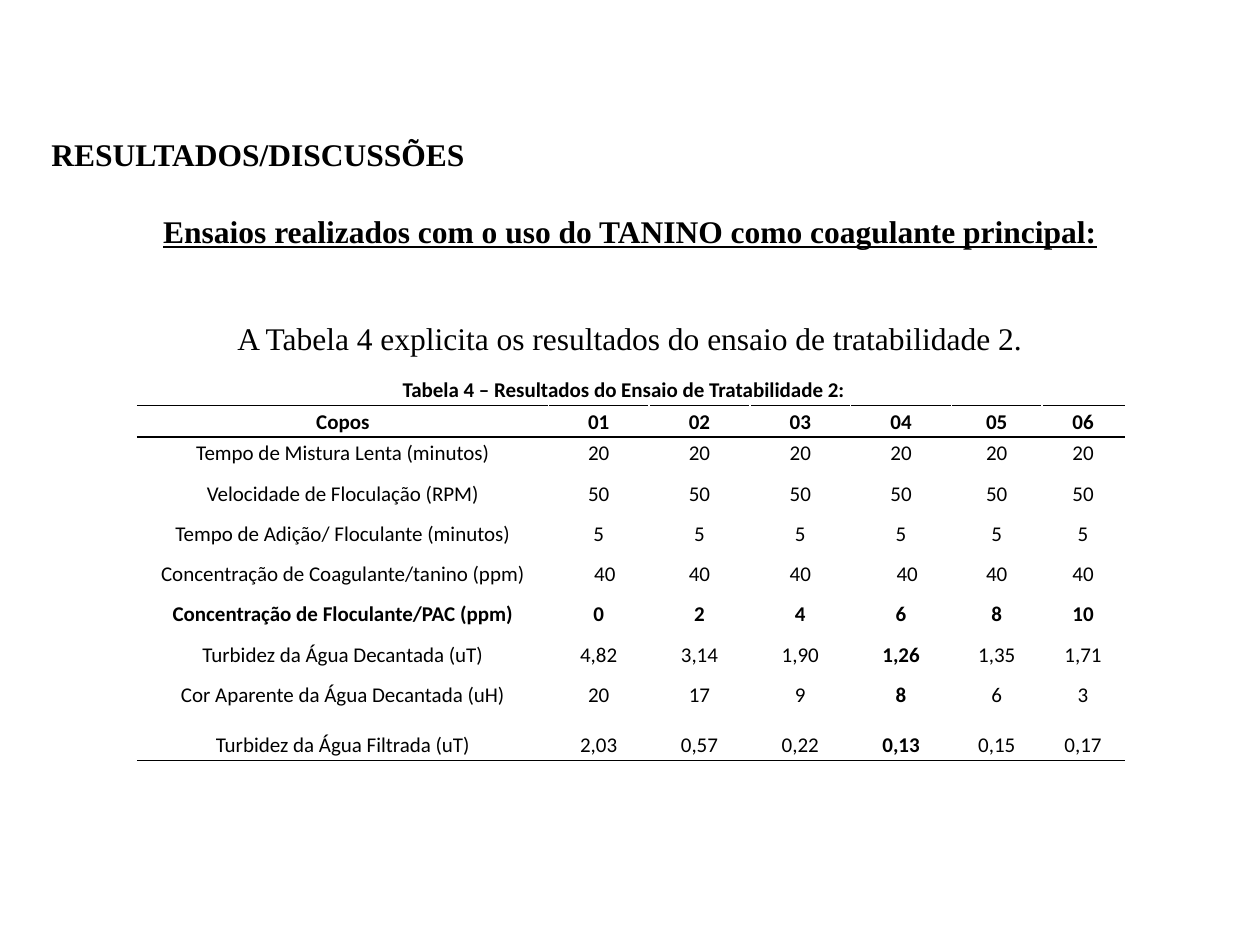
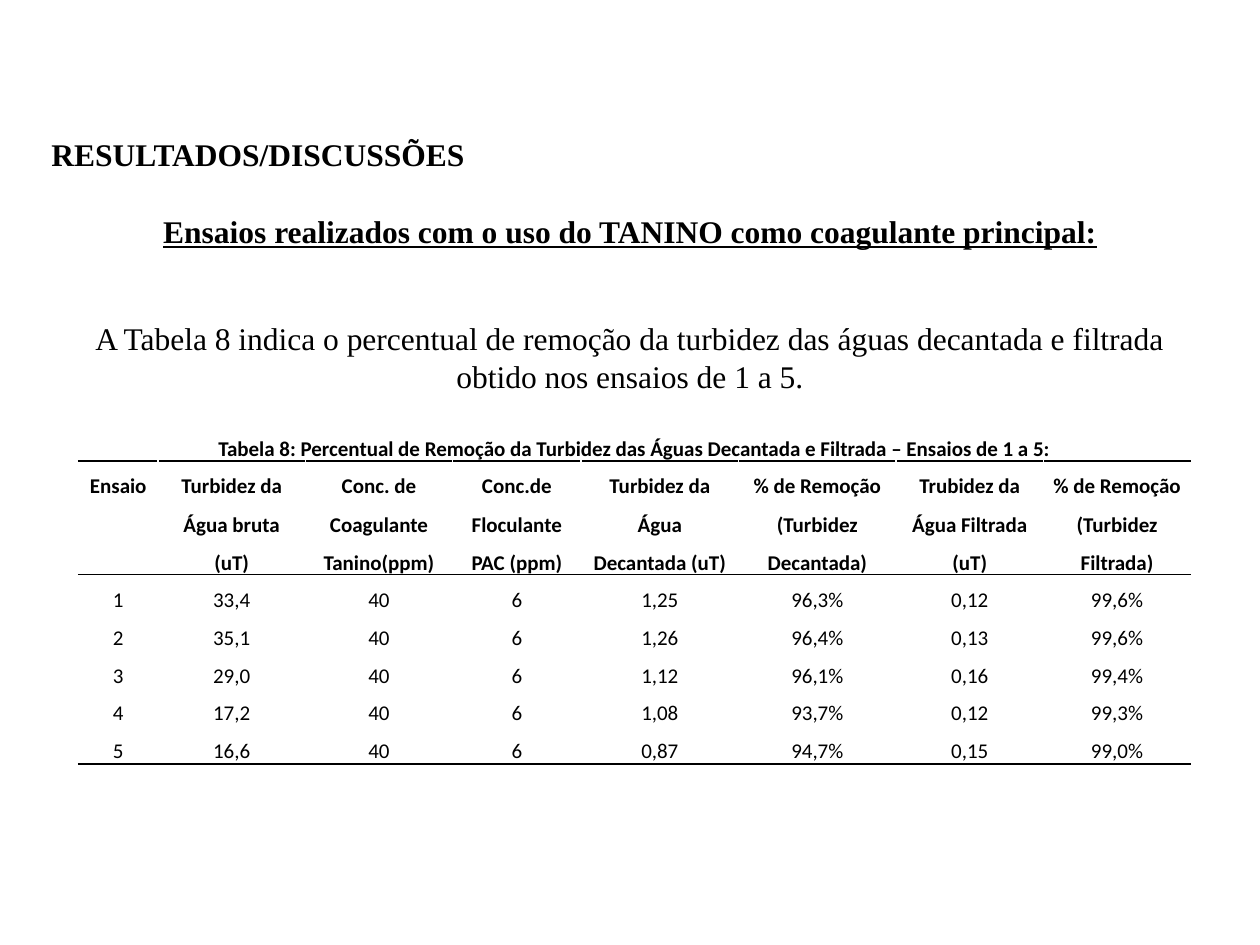
"""Build two slides of results for water treatment tests that use tannin."""
from lxml.etree import SubElement
from pptx import Presentation
from pptx.dml.color import RGBColor
from pptx.enum.text import PP_ALIGN
from pptx.oxml.ns import qn
from pptx.util import Pt

COLORS = {"ink": "000000"}
SECTION = "RESULTADOS/DISCUSSÕES"
SUBJECT = "Ensaios realizados com o uso do TANINO como coagulante principal:"


class Deck:
    heading_font = "Times New Roman"
    table_font = "Calibri"

    def __init__(self):
        self.presentation = Presentation()
        self.presentation.slide_width = Pt(720)
        self.presentation.slide_height = Pt(540)
        self.slide = None

    def add_slide(self):
        self.slide = self.presentation.slides.add_slide(self.presentation.slide_layouts[6])

    def style(self, paragraph, font, size, bold, align):
        paragraph.alignment = align
        paragraph.font.name = font
        paragraph.font.size = Pt(size)
        paragraph.font.bold = bold
        paragraph.font.color.rgb = RGBColor.from_string(COLORS["ink"])

    def heading(self, statement, height):
        frame = self.slide.shapes.add_textbox(Pt(22.3), Pt(73.5), Pt(675.4), Pt(height)).text_frame
        frame.word_wrap = True
        frame.text = "\n".join([SECTION, SUBJECT, statement])
        section, subject, summary = frame.paragraphs
        self.style(section, self.heading_font, 18, True, PP_ALIGN.JUSTIFY)
        self.style(subject, self.heading_font, 18, True, PP_ALIGN.CENTER)
        self.style(summary, self.heading_font, 18, False, PP_ALIGN.CENTER)
        subject.font.underline = True
        subject.space_before = Pt(22.7)
        summary.space_before = Pt(39.3)

    def rule(self, cell, side):
        line = SubElement(cell._tc.get_or_add_tcPr(), qn(f"a:{side}"), w=str(Pt(1)))
        fill = SubElement(line, qn("a:solidFill"))
        SubElement(fill, qn("a:srgbClr"), val=COLORS["ink"])

    def table(self, left, top, widths, heights, caption, rows, padding, spacing,
              space_after=0, bold_cells=(), nudges=None):
        nudges = nudges or {}
        grid = [[caption] + [""] * (len(widths) - 1)] + rows
        last = len(grid) - 1
        table = self.slide.shapes.add_table(
            len(grid), len(widths), Pt(left), Pt(top), Pt(sum(widths)), Pt(sum(heights))).table
        table.first_row = table.horz_banding = False
        for column, width in zip(table.columns, widths):
            column.width = Pt(width)
        for row, height in zip(table.rows, heights):
            row.height = Pt(height)
        table.cell(0, 0).merge(table.cell(0, len(widths) - 1))
        for r, row in enumerate(grid):
            for c, content in enumerate(row):
                cell = table.cell(r, c)
                nudge = nudges.get((r, c), 0)
                cell.margin_left = Pt(padding + max(nudge, 0))
                cell.margin_right = Pt(padding + max(-nudge, 0))
                cell.margin_top = cell.margin_bottom = 0
                cell.text_frame.text = content
                for paragraph in cell.text_frame.paragraphs:
                    bold = r < 2 or (r, c) in bold_cells
                    self.style(paragraph, self.table_font, 12, bold, PP_ALIGN.CENTER)
                    paragraph.line_spacing = spacing
                    paragraph.space_after = Pt(space_after)
                if r in (1, 2):
                    self.rule(cell, "lnT")
                if r in (0, 1, last):
                    self.rule(cell, "lnB")
                cell.fill.background()


def treatability_slide(deck):
    deck.add_slide()
    deck.heading("A Tabela 4 explicita os resultados do ensaio de tratabilidade 2.", 131.7)
    cups = 6
    rows = [
        ["Copos"] + [f"{cup:02}" for cup in range(1, cups + 1)],
        ["Tempo de Mistura Lenta (minutos)"] + ["20"] * cups,
        ["Velocidade de Floculação (RPM)"] + ["50"] * cups,
        ["Tempo de Adição/ Floculante (minutos)"] + ["5"] * cups,
        ["Concentração de Coagulante/tanino (ppm)"] + ["40"] * cups,
        ["Concentração de Floculante/PAC (ppm)", "0", "2", "4", "6", "8", "10"],
        ["Turbidez da Água Decantada (uT)", "4,82", "3,14", "1,90", "1,26", "1,35", "1,71"],
        ["Cor Aparente da Água Decantada (uH)", "20", "17", "9", "8", "6", "3"],
        ["Turbidez da Água Filtrada (uT)", "2,03", "0,57", "0,22", "0,13", "0,15", "0,17"],
    ]
    dose_row, best_cup = 6, 4
    bold_cells = {(dose_row, c) for c in range(cups + 1)} | {(r, best_cup) for r in (7, 8, 9)}
    deck.table(78.6, 213.8, [234.7] + [57.6] * 4 + [51.8, 46.8],
               [18, 18] + [23] * 6 + [28.8, 18],
               "Tabela 4 – Resultados do Ensaio de Tratabilidade 2:", rows,
               padding=3.6, spacing=1.15, space_after=10, bold_cells=bold_cells,
               nudges={(0, 0): -8, (5, 1): 7, (5, 4): 7})


def removal_slide(deck):
    deck.add_slide()
    deck.heading("A Tabela 8 indica o percentual de remoção da turbidez das águas "
                 "decantada e filtrada obtido nos ensaios de 1 a 5.", 153.3)
    rows = [
        ["Ensaio", "Turbidez da Água bruta (uT)", "Conc. de Coagulante\nTanino(ppm)",
         "Conc.de Floculante\nPAC (ppm)", "Turbidez da Água Decantada (uT)",
         "% de Remoção (Turbidez Decantada)", "Trubidez da Água Filtrada (uT)",
         "% de Remoção (Turbidez Filtrada)"],
        ["1", "33,4", "40", "6", "1,25", "96,3%", "0,12", "99,6%"],
        ["2", "35,1", "40", "6", "1,26", "96,4%", "0,13", "99,6%"],
        ["3", "29,0", "40", "6", "1,12", "96,1%", "0,16", "99,4%"],
        ["4", "17,2", "40", "6", "1,08", "93,7%", "0,12", "99,3%"],
        ["5", "16,6", "40", "6", "0,87", "94,7%", "0,15", "99,0%"],
    ]
    deck.table(44.9, 241.9, [45.4, 84.2, 84.2, 73.4, 90, 90, 84.2, 84.2],
               [21.6, 56.2] + [21.6] * 5,
               "Tabela 8: Percentual de Remoção da Turbidez das Águas Decantada e Filtrada"
               " – Ensaios de 1 a 5:", rows, padding=5, spacing=1.5)


def main():
    deck = Deck()
    treatability_slide(deck)
    removal_slide(deck)
    deck.presentation.save("out.pptx")


if __name__ == "__main__":
    main()
